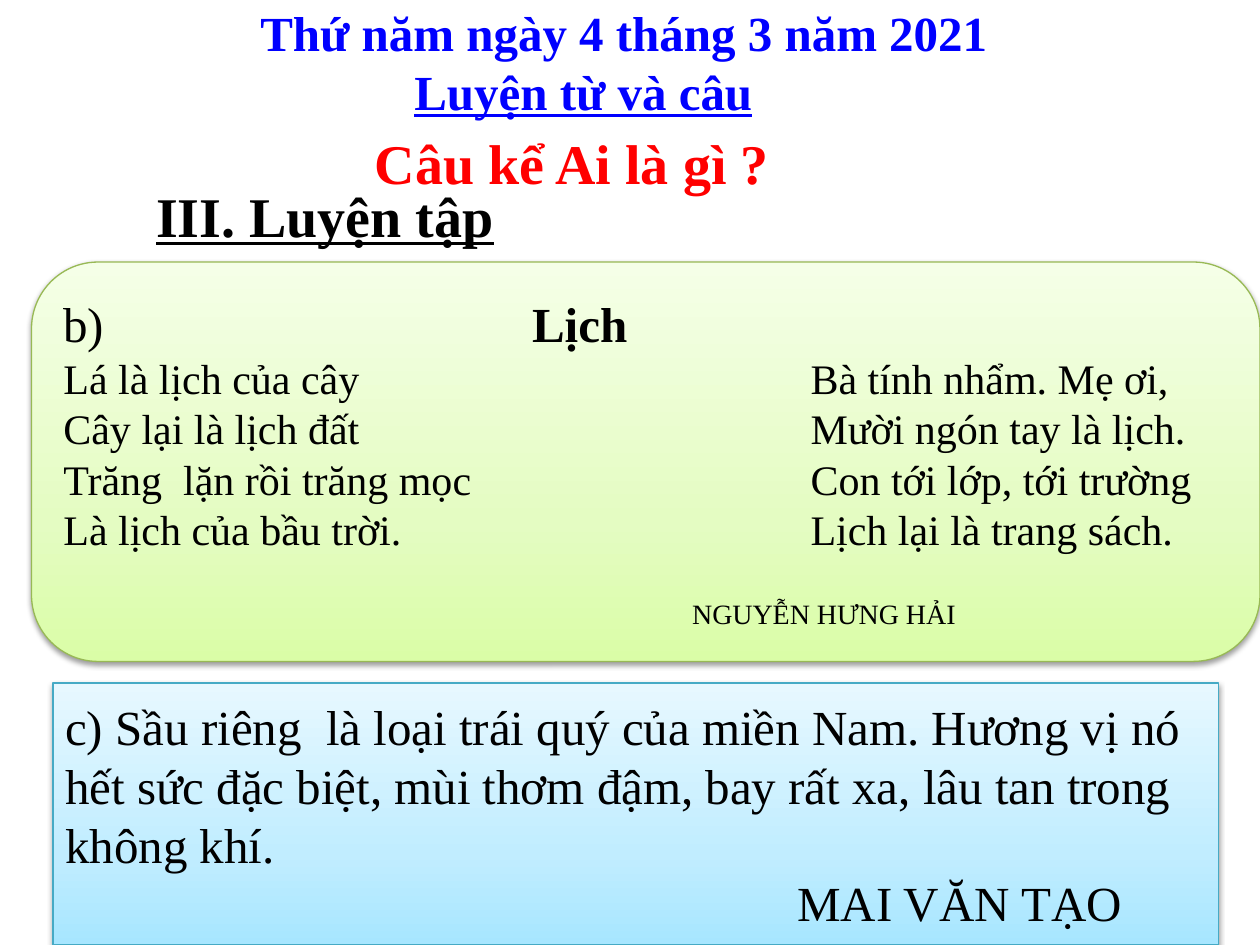
from copy import deepcopy

from lxml import etree
from pptx import Presentation
from pptx.dml.color import RGBColor
from pptx.enum.shapes import MSO_SHAPE
from pptx.enum.text import MSO_ANCHOR, PP_ALIGN
from pptx.oxml import parse_xml
from pptx.oxml.ns import nsdecls, qn
from pptx.util import Inches, Pt

LEFT, CENTER = PP_ALIGN.LEFT, PP_ALIGN.CENTER
TOP, MIDDLE = MSO_ANCHOR.TOP, MSO_ANCHOR.MIDDLE
ROUNDED, PROCESS = MSO_SHAPE.ROUNDED_RECTANGLE, MSO_SHAPE.FLOWCHART_PROCESS
FONT = "Times New Roman"
COLORS = {"black": "000000", "blue": "0000FF", "red": "FF0000",
          "green_line": "98B955", "cyan_line": "46AAC5"}
GREEN_STOPS = [(0, "DAFDA7"), (0.35, "E4FCC2"), (1, "F5FFE7")]
CYAN_STOPS = [(0, "A7E6FF"), (0.35, "C1EDFF"), (1, "E7F8FF")]

SECTION = "III. Luyện tập"
DATE = "Thứ năm ngày 4 tháng 3 năm 2021"
SUBJECT = "Luyện từ và câu"
LESSON = "Câu kể Ai là gì ?"
POEM_MARK, POEM_TITLE = "b)", "Lịch"
POEM = [
    ("Lá là lịch của cây", "Bà tính nhẩm. Mẹ ơi,"),
    ("Cây lại là lịch đất", "Mười ngón tay là lịch."),
    ("Trăng  lặn rồi trăng mọc", "Con tới lớp, tới trường"),
    ("Là lịch của bầu trời.", "Lịch lại là trang sách."),
]
POET = "NGUYỄN HƯNG HẢI"
PASSAGE = ("c) Sầu riêng  là loại trái quý của miền Nam. Hương vị nó hết sức đặc biệt, "
           "mùi thơm đậm, bay rất xa, lâu tan trong không khí.")
PASSAGE_AUTHOR = "MAI VĂN TẠO"


def add_span(para, text, size=28, color="black", bold=False, underline=False):
    span = para.add_run()
    span.text = text
    span.font.name = FONT
    span.font.size = Pt(size)
    span.font.bold = bold
    span.font.underline = underline
    span.font.color.rgb = RGBColor.from_string(COLORS[color])


def add_para(frame, text, align=LEFT, tab=None, indent=None, before=0, **style):
    para = frame.paragraphs[0]
    if para.runs:
        para = frame.add_paragraph()
    para.alignment = align
    para.space_before = Pt(before)
    properties = para._p.get_or_add_pPr()
    if indent:
        properties.set("marL", str(Inches(indent)))
    if tab:
        tabs = etree.SubElement(properties, qn("a:tabLst"))
        etree.SubElement(tabs, qn("a:tab"), pos=str(Inches(tab)), algn="l")
    add_span(para, text, **style)
    return para


def prepare_frame(box, anchor):
    box.text_frame.word_wrap = True
    box.text_frame.vertical_anchor = anchor
    return box.text_frame


def add_text_box(page, *place):
    return prepare_frame(page.shapes.add_textbox(*map(Inches, place)), TOP)


def add_panel(page, kind, place, stops, line):
    panel = page.shapes.add_shape(kind, *map(Inches, place))
    panel.fill.gradient()
    panel.fill.gradient_angle = 90
    stop_list = panel._element.spPr.find(".//" + qn("a:gsLst"))
    stop_list.append(deepcopy(stop_list[0]))
    for stop, (position, color) in zip(panel.fill.gradient_stops, stops):
        stop.position = position
        stop.color.rgb = RGBColor.from_string(color)
    panel.line.color.rgb = RGBColor.from_string(COLORS[line])
    panel.line.width = Pt(0.75)
    panel._element.spPr.append(parse_xml(
        f'<a:effectLst {nsdecls("a")}><a:outerShdw blurRad="{Pt(3.1)}" dist="{Pt(1.6)}" '
        'dir="5400000" rotWithShape="0"><a:srgbClr val="000000"><a:alpha val="38000"/>'
        '</a:srgbClr></a:outerShdw></a:effectLst>'))
    return prepare_frame(panel, MIDDLE)


def main():
    deck = Presentation()
    deck.slide_width, deck.slide_height = Inches(10), Inches(7.5)
    page = deck.slides.add_slide(deck.slide_layouts[5])

    title = page.shapes.title
    title.left, title.top, title.width, title.height = map(Inches, (-1.92, 1.08, 9, 1.25))
    add_para(prepare_frame(title, MIDDLE), SECTION, align=CENTER, size=32,
             bold=True, underline=True)

    poem = add_panel(page, ROUNDED, (0.25, 2.08, 9.75, 3.17), GREEN_STOPS, "green_line")
    heading = add_para(poem, POEM_MARK + "\t", tab=3.72)
    add_span(heading, POEM_TITLE, bold=True)
    for verses in POEM:
        add_para(poem, "\t".join(verses), tab=5.93, size=24)
    add_para(poem, POET, indent=4.99, before=24, size=16)

    passage = add_panel(page, PROCESS, (0.42, 5.42, 9.25, 2.08), CYAN_STOPS, "cyan_line")
    add_para(passage, PASSAGE)
    add_para(passage, PASSAGE_AUTHOR, indent=5.81)

    header = add_text_box(page, -0.5, -0.03, 10.9, 1.04)
    add_para(header, DATE, align=CENTER, color="blue", bold=True)
    add_para(header, SUBJECT, indent=3.69, color="blue", bold=True, underline=True)

    lesson = add_text_box(page, 2.75, 0.97, 3.58, 0.42)
    add_para(lesson, LESSON, align=CENTER, size=32, color="red", bold=True)

    deck.save("out.pptx")


if __name__ == "__main__":
    main()
